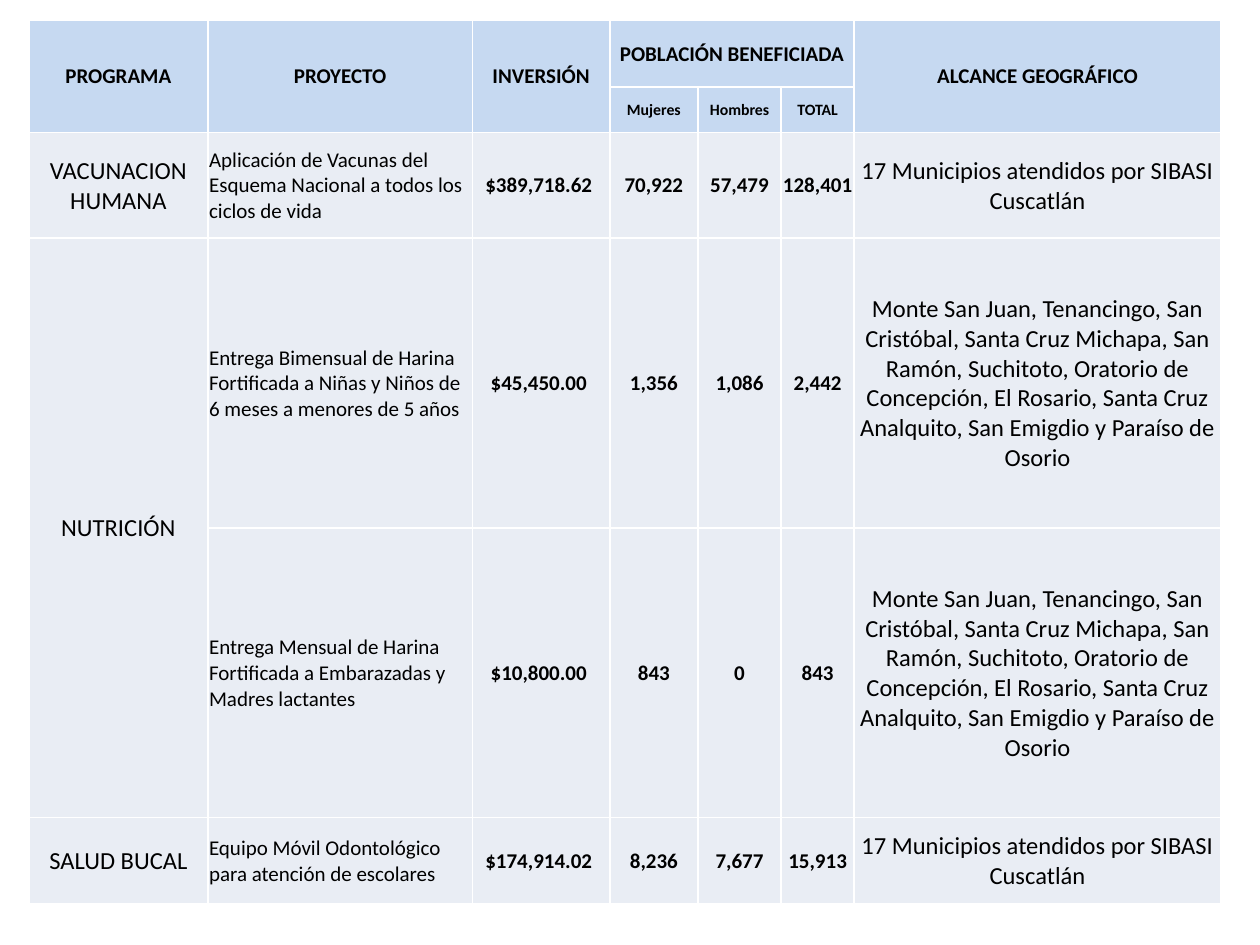
from pptx import Presentation
from pptx.dml.color import RGBColor
from pptx.enum.text import MSO_ANCHOR, PP_ALIGN
from pptx.oxml import parse_xml
from pptx.oxml.ns import nsdecls
from pptx.util import Inches, Pt

BLACK = RGBColor(0x00, 0x00, 0x00)
WHITE = RGBColor(0xFF, 0xFF, 0xFF)
HEADER_BLUE = RGBColor(0xC6, 0xD9, 0xF1)
BODY_GREY = RGBColor(0xE9, 0xED, 0xF4)

GRID_COLUMNS, GRID_ROWS = 1000, 750
COLUMN_WIDTHS = [142, 210, 109, 70, 66, 58, 291]
ROW_HEIGHTS = [53, 36, 84, 230, 230, 68]
MERGES = [(0, 0, 1, 0), (0, 1, 1, 1), (0, 2, 1, 2), (0, 3, 0, 5), (0, 6, 1, 6), (3, 0, 4, 0)]

HEADING = {"size": Pt(12), "bold": True}
SUBHEADING = {"size": Pt(9), "bold": True}
LARGE = {"size": Pt(14), "bold": False}
DETAIL = {"size": Pt(12), "bold": False}
BODY_FORMATS = [LARGE, DETAIL] + [HEADING] * 4 + [LARGE]

ALL_TOWNS = "17 Municipios atendidos por SIBASI Cuscatlán"
NUTRITION_TOWNS = (
    "Monte San Juan, Tenancingo, San Cristóbal, Santa Cruz Michapa, San Ramón, "
    "Suchitoto, Oratorio de Concepción, El Rosario, Santa Cruz Analquito, "
    "San Emigdio y Paraíso de Osorio"
)
HEADINGS = ["PROGRAMA", "PROYECTO", "INVERSIÓN", "POBLACIÓN BENEFICIADA", "", "", "ALCANCE GEOGRÁFICO"]
SUBHEADINGS = ["", "", "", "Mujeres", "Hombres", "TOTAL", ""]
PROJECTS = [
    ["VACUNACION HUMANA", "Aplicación de Vacunas del Esquema Nacional a todos los ciclos de vida",
     "$389,718.62 ", "70,922", "57,479", "128,401", ALL_TOWNS],
    ["NUTRICIÓN", "Entrega Bimensual de Harina Fortificada a Niñas y Niños de 6 meses a menores de 5 años",
     "$45,450.00 ", "1,356", "1,086", "2,442", NUTRITION_TOWNS],
    ["", "Entrega Mensual de Harina Fortificada a Embarazadas y Madres lactantes",
     "$10,800.00 ", "843", "0", "843", NUTRITION_TOWNS],
    ["SALUD BUCAL", "Equipo Móvil Odontológico para atención de escolares",
     "$174,914.02 ", "8,236", "7,677", "15,913", ALL_TOWNS],
]


def set_all(target, values):
    for name, value in values.items():
        setattr(target, name, value)


class SlideBuilder:
    """Hold the deck style and the current slide, and add elements on a fine grid."""

    font_name = "Calibri"
    cell_format = {
        "vertical_anchor": MSO_ANCHOR.MIDDLE,
        "margin_left": Inches(0.01),
        "margin_top": Inches(0.01),
        "margin_right": Inches(0.01),
        "margin_bottom": 0,
    }
    table_format = {"first_row": False, "horz_banding": False}

    def __init__(self, deck):
        self.deck = deck
        self.page = deck.slides.add_slide(deck.slide_layouts[6])

    def across(self, columns):
        return round(self.deck.slide_width * columns / GRID_COLUMNS)

    def down(self, rows):
        return round(self.deck.slide_height * rows / GRID_ROWS)

    def table(self, left, top, widths, heights, merges):
        frame = self.page.shapes.add_table(
            len(heights), len(widths), self.across(left), self.down(top),
            self.across(sum(widths)), self.down(sum(heights)))
        table = frame.table
        set_all(table, self.table_format)
        for column, width in zip(table.columns, widths):
            column.width = self.across(width)
        for row, height in zip(table.rows, heights):
            row.height = self.down(height)
        for first_row, first_column, last_row, last_column in merges:
            table.cell(first_row, first_column).merge(table.cell(last_row, last_column))
        return table

    def row(self, table, index, texts, formats, color):
        for column, (text, text_format) in enumerate(zip(texts, formats)):
            align = PP_ALIGN.LEFT if text_format is DETAIL else PP_ALIGN.CENTER
            self.cell(table.cell(index, column), text, text_format, align, color)

    def cell(self, cell, text, text_format, align, color):
        set_all(cell, self.cell_format)
        self.borders(cell)
        cell.fill.solid()
        cell.fill.fore_color.rgb = color
        if text:
            para = cell.text_frame.paragraphs[0]
            para.alignment = align
            span = para.add_run()
            span.text = text
            set_all(span.font, {"name": self.font_name, **text_format})
            span.font.color.rgb = BLACK

    def borders(self, cell):
        properties = cell._tc.get_or_add_tcPr()
        for side in ("lnL", "lnR", "lnT", "lnB"):
            properties.append(parse_xml(
                f'<a:{side} {nsdecls("a")} w="{Pt(1)}"><a:solidFill>'
                f'<a:srgbClr val="{WHITE}"/></a:solidFill></a:{side}>'))


def main():
    deck = Presentation()
    set_all(deck, {"slide_width": Inches(10), "slide_height": Inches(7.5)})
    builder = SlideBuilder(deck)
    programs = builder.table(23, 16, COLUMN_WIDTHS, ROW_HEIGHTS, MERGES)
    count = len(COLUMN_WIDTHS)
    builder.row(programs, 0, HEADINGS, [HEADING] * count, HEADER_BLUE)
    builder.row(programs, 1, SUBHEADINGS, [SUBHEADING] * count, HEADER_BLUE)
    for index, project in enumerate(PROJECTS, start=2):
        builder.row(programs, index, project, BODY_FORMATS, BODY_GREY)
    deck.save("out.pptx")


if __name__ == "__main__":
    main()
